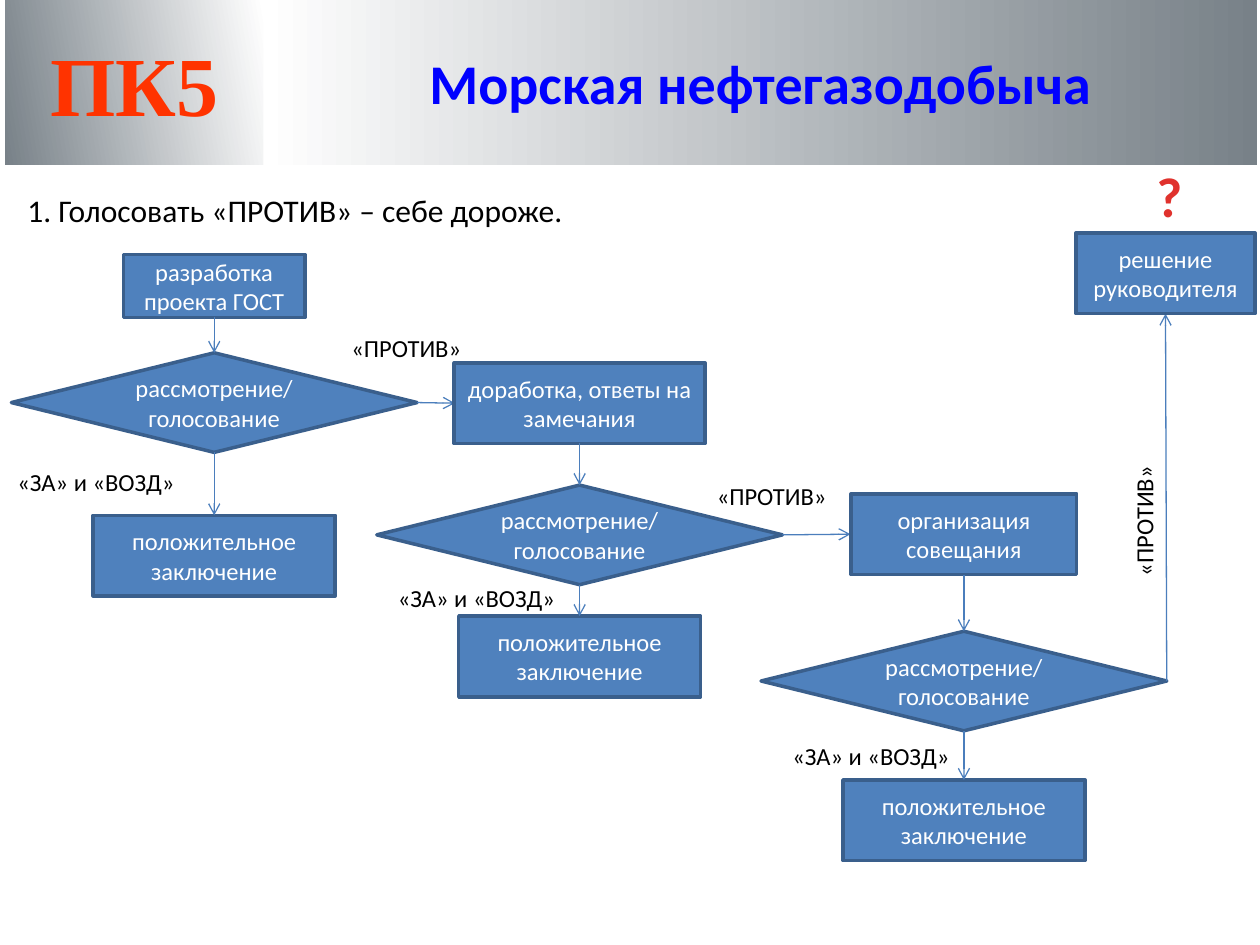
from pptx import Presentation
from pptx.dml.color import RGBColor
from pptx.enum.shapes import MSO_CONNECTOR as Connector, MSO_SHAPE as Shape
from pptx.enum.text import MSO_ANCHOR as Anchor, PP_ALIGN as Align
from pptx.oxml.ns import qn
from pptx.util import Inches, Pt
from lxml.etree import SubElement

WHITE = RGBColor(0xFF, 0xFF, 0xFF)
BLACK = RGBColor(0x00, 0x00, 0x00)
GRAY = RGBColor(0x78, 0x81, 0x88)
BLUE = RGBColor(0x00, 0x00, 0xFF)
ORANGE = RGBColor(0xFF, 0x33, 0x00)
RED = RGBColor(0xE0, 0x32, 0x2D)
STEEL = RGBColor(0x4F, 0x81, 0xBD)
EDGE = RGBColor(0x3A, 0x5F, 0x8C)
ARROW = RGBColor(0x4B, 0x7E, 0xBC)

COLUMNS, ROWS = 100, 75
BOX_HEIGHT = 6.4
DECISION_WIDTH, DECISION_HEIGHT = 32.2, 7.9
RESULT_WIDTH = 19.2


class FlowPage:
    def __init__(self, deck):
        self.page = deck.slides.add_slide(deck.slide_layouts[6])
        self.column = deck.slide_width / COLUMNS
        self.row = deck.slide_height / ROWS

    def place(self, left, top, width, height):
        return (round(left * self.column), round(top * self.row),
                round(width * self.column), round(height * self.row))

    def set_text(self, shape, text, size=14, color=WHITE, font="Calibri",
                 bold=False, align=Align.CENTER, wrap=True):
        shape.text_frame.word_wrap = wrap
        para = shape.text_frame.paragraphs[0]
        para.text = text
        para.alignment = align
        para.font.name = font
        para.font.size = Pt(size)
        para.font.bold = bold
        para.font.color.rgb = color
        return para

    def shape(self, kind, frame):
        box = self.page.shapes.add_shape(kind, *self.place(*frame))
        box.shadow.inherit = False
        box.text_frame.vertical_anchor = Anchor.MIDDLE
        return box

    def banner(self, frame, angle, text, **style):
        box = self.shape(Shape.RECTANGLE, frame)
        box.line.fill.background()
        box.fill.gradient()
        box.fill.gradient_angle = angle
        for stop, color in zip(box.fill.gradient_stops, (WHITE, GRAY)):
            stop.color.rgb = color
        return self.set_text(box, text, bold=True, **style)

    def step(self, center, top, width, text, kind=Shape.FLOWCHART_PROCESS, height=BOX_HEIGHT):
        box = self.shape(kind, (center - width / 2, top, width, height))
        box.fill.solid()
        box.fill.fore_color.rgb = STEEL
        box.line.color.rgb = EDGE
        box.line.width = Pt(2)
        self.set_text(box, text)

    def label(self, left, top, width, text, height=3.4, turn=0, color=BLACK,
              align=Align.LEFT, wrap=False, **style):
        box = self.page.shapes.add_textbox(*self.place(left, top, width, height))
        box.rotation = turn
        self.set_text(box, text, color=color, align=align, wrap=wrap, **style)

    def arrow(self, start, end):
        line = self.page.shapes.add_connector(
            Connector.STRAIGHT, *self.place(*start, *end))
        line.line.color.rgb = ARROW
        line.line.width = Pt(0.75)
        properties = line._element.spPr
        SubElement(properties.find(qn("a:ln")), qn("a:tailEnd"), type="arrow")
        SubElement(properties, qn("a:effectLst"))

    def stage(self, center, top, width, text, decision, result, approval,
              objection, target, kind=Shape.FLOWCHART_PROCESS, height=BOX_HEIGHT, turn=0):
        middle = decision + DECISION_HEIGHT / 2
        self.step(center, top, width, text, kind, height)
        self.step(center, decision, DECISION_WIDTH, "рассмотрение/ голосование",
                  Shape.FLOWCHART_DECISION, DECISION_HEIGHT)
        self.step(center, result, RESULT_WIDTH, "положительное заключение")
        self.arrow((center, top + height), (center, decision))
        self.arrow((center, decision + DECISION_HEIGHT), (center, result))
        self.arrow((center + DECISION_WIDTH / 2, middle), target)
        self.label(*approval, 14.6, "«ЗА» и «ВОЗД»")
        self.label(*objection, 10.8, "«ПРОТИВ»", turn=turn)


def main():
    deck = Presentation()
    deck.slide_width, deck.slide_height = Inches(10), Inches(7.5)
    flow = FlowPage(deck)

    code = flow.banner((0.4, 0, 20.5, 13.1), 190, "ПК5",
                       size=48, color=ORANGE, font="Times New Roman")
    code.space_before = Pt(7)
    flow.banner((20.9, 0, 78.9, 13.1), 0, "Морская нефтегазодобыча",
                size=32, color=BLUE, wrap=False)
    flow.label(1.2, 14.7, 69.3, "1. Голосовать «ПРОТИВ» – себе дороже.",
               height=4, size=18, align=Align.JUSTIFY, wrap=True)

    flow.stage(17, 20.2, 14.4, "разработка проекта ГОСТ", 28, 40.9,
               (0.4, 36.6), (26.9, 25.9), (36.1, 32),
               kind=Shape.RECTANGLE, height=5)
    flow.stage(46, 28.8, 19.9, "доработка, ответы на замечания", 38.5, 48.9,
               (30.6, 45.8), (55.9, 37.7), (67.5, 42.4))
    flow.stage(76.5, 39.2, 17.9, "организация совещания", 50.1, 61.9,
               (61.9, 58.3), (85.4, 39.6), (92.5, 24.9), turn=270)
    flow.step(92.5, 18.5, 14.2, "решение руководителя")
    flow.label(90.8, 12.3, 4.2, "?", height=6.4, size=32, color=RED, bold=True)

    deck.save("out.pptx")


if __name__ == "__main__":
    main()
